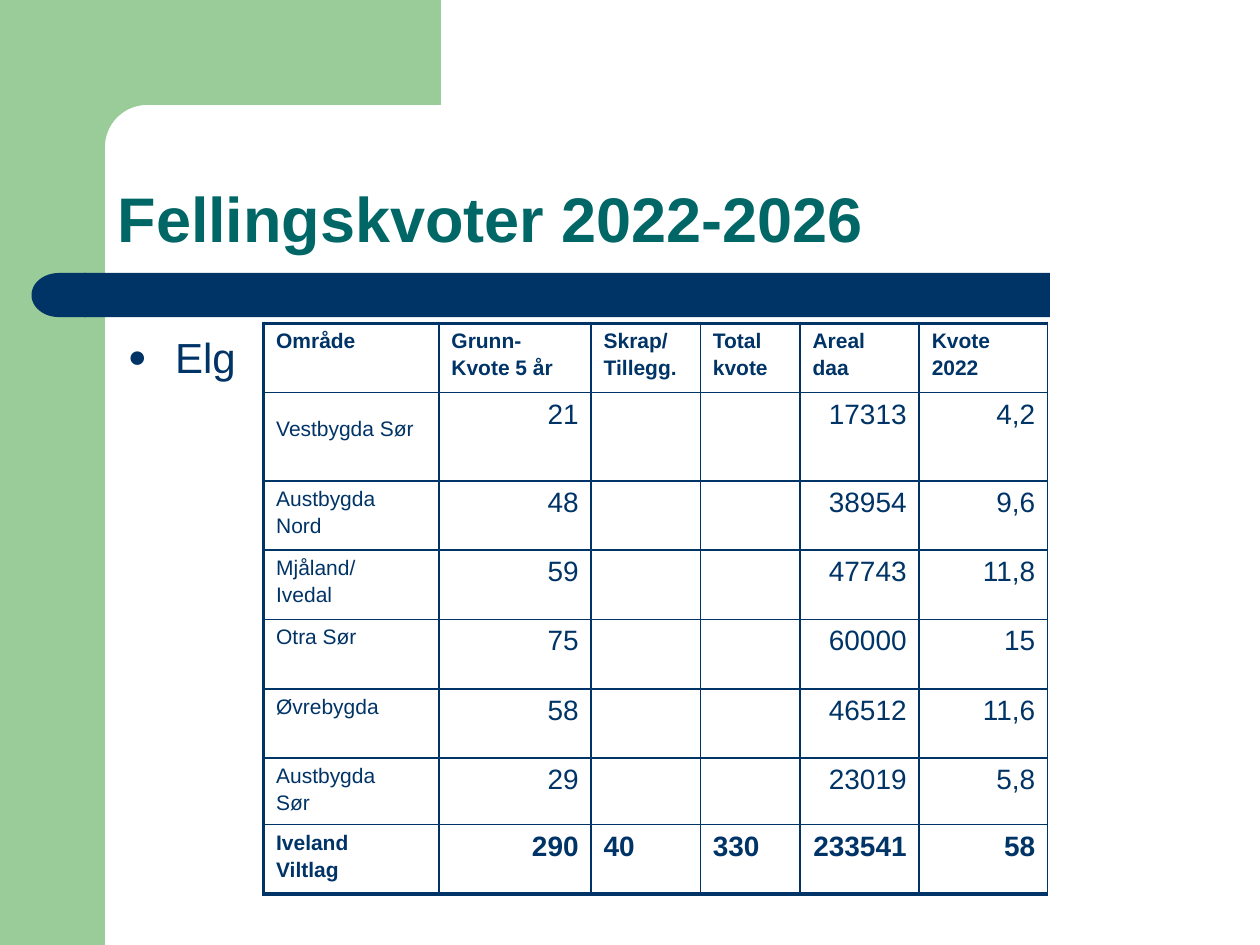
import math
from dataclasses import dataclass

import pptx
import pptx.dml.color
import pptx.enum.shapes
import pptx.enum.text
import pptx.oxml
import pptx.oxml.ns
import pptx.util

SHAPE = pptx.enum.shapes.MSO_SHAPE
ALIGN = pptx.enum.text.PP_ALIGN
GRID_COLUMNS, GRID_ROWS = 120, 90
SLIDE_WIDTH, SLIDE_HEIGHT = pptx.util.Inches(10), pptx.util.Inches(7.5)


@dataclass(frozen=True)
class Theme:
    font: str = "Arial"
    green: str = "99CC99"
    navy: str = "003366"
    teal: str = "006666"
    title_size: float = 36
    body_size: float = 24
    figure_size: float = 16
    label_size: float = 12
    thin: float = 1
    thick: float = 2.25
    paragraph_gap: float = 2


@dataclass(frozen=True)
class Area:
    column: float
    row: float
    columns: float
    rows: float

    def emu(self) -> tuple[int, int, int, int]:
        return across(self.column), down(self.row), across(self.columns), down(self.rows)


@dataclass(frozen=True)
class Block:
    kind: int
    area: Area
    color: str
    mirrored: bool = False


@dataclass(frozen=True)
class QuotaRow:
    height: float
    cells: tuple[str, ...]
    bold: bool = False


THEME = Theme()
BLOCKS = (
    Block(SHAPE.RECTANGLE, Area(0, 0, 10, 90), THEME.green),
    Block(SHAPE.RECTANGLE, Area(8, 26, 92, 4.2), THEME.navy),
    Block(SHAPE.FLOWCHART_DELAY, Area(3, 26, 5.2, 4.2), THEME.navy, mirrored=True),
)
TITLE_AREA = Area(10, 10, 104, 15)
BULLET_AREA = Area(11, 31, 49.4, 48.8)
TABLE_AREA = Area(25.1, 30.8, 74.7, 54.1)
COLUMN_WIDTHS = (16.7, 14.5, 10.4, 9.5, 11.35, 12.25)
RIGHT_ALIGNED_COLUMNS = (1, 4, 5)
QUOTAS = (
    QuotaRow(6.6, ("Område", "Grunn-\nKvote 5 år", "Skrap/\nTillegg.",
                   "Total\nkvote", "Areal\ndaa", "Kvote\n2022"), bold=True),
    QuotaRow(8.4, ("Vestbygda Sør", "21", "", "", "17313", "4,2")),
    QuotaRow(6.6, ("Austbygda\nNord", "48", "", "", "38954", "9,6")),
    QuotaRow(6.6, ("Mjåland/\nIvedal", "59", "", "", "47743", "11,8")),
    QuotaRow(6.6, ("Otra Sør", "75", "", "", "60000", "15")),
    QuotaRow(6.6, ("Øvrebygda", "58", "", "", "46512", "11,6")),
    QuotaRow(6.1, ("Austbygda\nSør", "29", "", "", "23019", "5,8")),
    QuotaRow(6.6, ("Iveland\nViltlag", "290", "40", "330", "233541", "58"), bold=True),
)


def across(columns: float) -> int:
    return round(SLIDE_WIDTH * columns / GRID_COLUMNS)


def down(rows: float) -> int:
    return round(SLIDE_HEIGHT * rows / GRID_ROWS)


def rgb(color: str) -> pptx.dml.color.RGBColor:
    return pptx.dml.color.RGBColor.from_string(color)


def place(shape, area: Area) -> None:
    shape.left, shape.top, shape.width, shape.height = area.emu()


def paint(shape, color: str) -> None:
    shape.shadow.inherit = False
    shape.fill.solid()
    shape.fill.fore_color.rgb = rgb(color)
    shape.line.fill.background()


def add_span(para, text: str, size: float, color: str = THEME.navy, bold: bool = False) -> None:
    span = para.add_run()
    span.text = text
    span.font.name = THEME.font
    span.font.size = pptx.util.Pt(size)
    span.font.bold = bold
    span.font.color.rgb = rgb(color)


def draw_block(page, block: Block) -> None:
    shape = page.shapes.add_shape(block.kind, *block.area.emu())
    paint(shape, block.color)
    if block.mirrored:
        shape.element.spPr.xfrm.set("flipH", "1")


def draw_corner(page) -> None:
    center, radius, steps = 14, 4, 16
    angles = [math.pi / 2 * step / steps for step in range(steps + 1)]
    curve = [(center - radius * math.sin(a), center - radius * math.cos(a)) for a in angles]
    outline = [(42, 0), (42, 10), *curve, (10, 15.4), (6, 15.4), (6, 0)]
    points = [(across(column), down(row)) for column, row in outline]
    builder = page.shapes.build_freeform(*points[0])
    builder.add_line_segments(points[1:], close=True)
    paint(builder.convert_to_shape(), THEME.green)


def write_title(page) -> None:
    title = page.shapes.title
    place(title, TITLE_AREA)
    box = title.text_frame
    box.word_wrap = True
    box.auto_size = pptx.enum.text.MSO_AUTO_SIZE.NONE
    box.vertical_anchor = pptx.enum.text.MSO_ANCHOR.BOTTOM
    para = box.paragraphs[0]
    para.alignment = ALIGN.LEFT
    para.line_spacing = 0.9
    add_span(para, "Fellingskvoter 2022-2026", THEME.title_size, THEME.teal, bold=True)


def write_bullet(page) -> None:
    box = page.shapes.add_textbox(*BULLET_AREA.emu()).text_frame
    box.word_wrap = True
    para = box.paragraphs[0]
    add_span(para, "Elg", THEME.body_size)
    properties = para._p.get_or_add_pPr()
    indent = across(4.5)
    properties.set("marL", str(indent))
    properties.set("indent", str(-indent))
    namespace = pptx.oxml.ns.nsdecls("a")
    for markup in (
        f'<a:buClr {namespace}><a:srgbClr val="{THEME.navy}"/></a:buClr>',
        f'<a:buSzPct {namespace} val="75000"/>',
        f'<a:buFont {namespace} typeface="{THEME.font}"/>',
        f'<a:buChar {namespace} char="●"/>',
    ):
        properties.append(pptx.oxml.parse_xml(markup))


def draw_borders(cell, row: int, column: int) -> None:
    thick_sides = {"L": column == 0, "R": False, "T": row == 0, "B": row == len(QUOTAS) - 1}
    properties = cell._tc.get_or_add_tcPr()
    for side, is_thick in thick_sides.items():
        width = pptx.util.Pt(THEME.thick if is_thick else THEME.thin)
        properties.append(pptx.oxml.parse_xml(
            f'<a:ln{side} {pptx.oxml.ns.nsdecls("a")} w="{width}"><a:solidFill>'
            f'<a:srgbClr val="{THEME.navy}"/></a:solidFill></a:ln{side}>'))


def fill_cell(cell, row: int, column: int) -> None:
    quota = QUOTAS[row]
    draw_borders(cell, row, column)
    cell.fill.background()
    is_figure = row > 0 and column > 0
    size = THEME.figure_size if is_figure else THEME.label_size
    text = quota.cells[column]
    for index, line in enumerate(text.split("\n") if text else ()):
        para = cell.text_frame.paragraphs[0] if index == 0 else cell.text_frame.add_paragraph()
        para.space_before = pptx.util.Pt(THEME.paragraph_gap)
        right = is_figure and column in RIGHT_ALIGNED_COLUMNS
        para.alignment = ALIGN.RIGHT if right else ALIGN.LEFT
        add_span(para, line, size, bold=quota.bold)
        if line == "Vestbygda Sør":
            add_span(para, " ", THEME.body_size)


def draw_table(page) -> None:
    frame = page.shapes.add_table(len(QUOTAS), len(COLUMN_WIDTHS), *TABLE_AREA.emu())
    table = frame.table
    table.first_row = table.horz_banding = False
    for column, width in enumerate(COLUMN_WIDTHS):
        table.columns[column].width = across(width)
    for row, quota in enumerate(QUOTAS):
        table.rows[row].height = down(quota.height)
        for column in range(len(COLUMN_WIDTHS)):
            fill_cell(table.cell(row, column), row, column)


def main() -> None:
    deck = pptx.Presentation()
    deck.slide_width, deck.slide_height = SLIDE_WIDTH, SLIDE_HEIGHT
    page = deck.slides.add_slide(deck.slide_layouts.get_by_name("Title Only"))
    draw_corner(page)
    for block in BLOCKS:
        draw_block(page, block)
    write_title(page)
    write_bullet(page)
    draw_table(page)
    deck.save("out.pptx")


if __name__ == "__main__":
    main()
